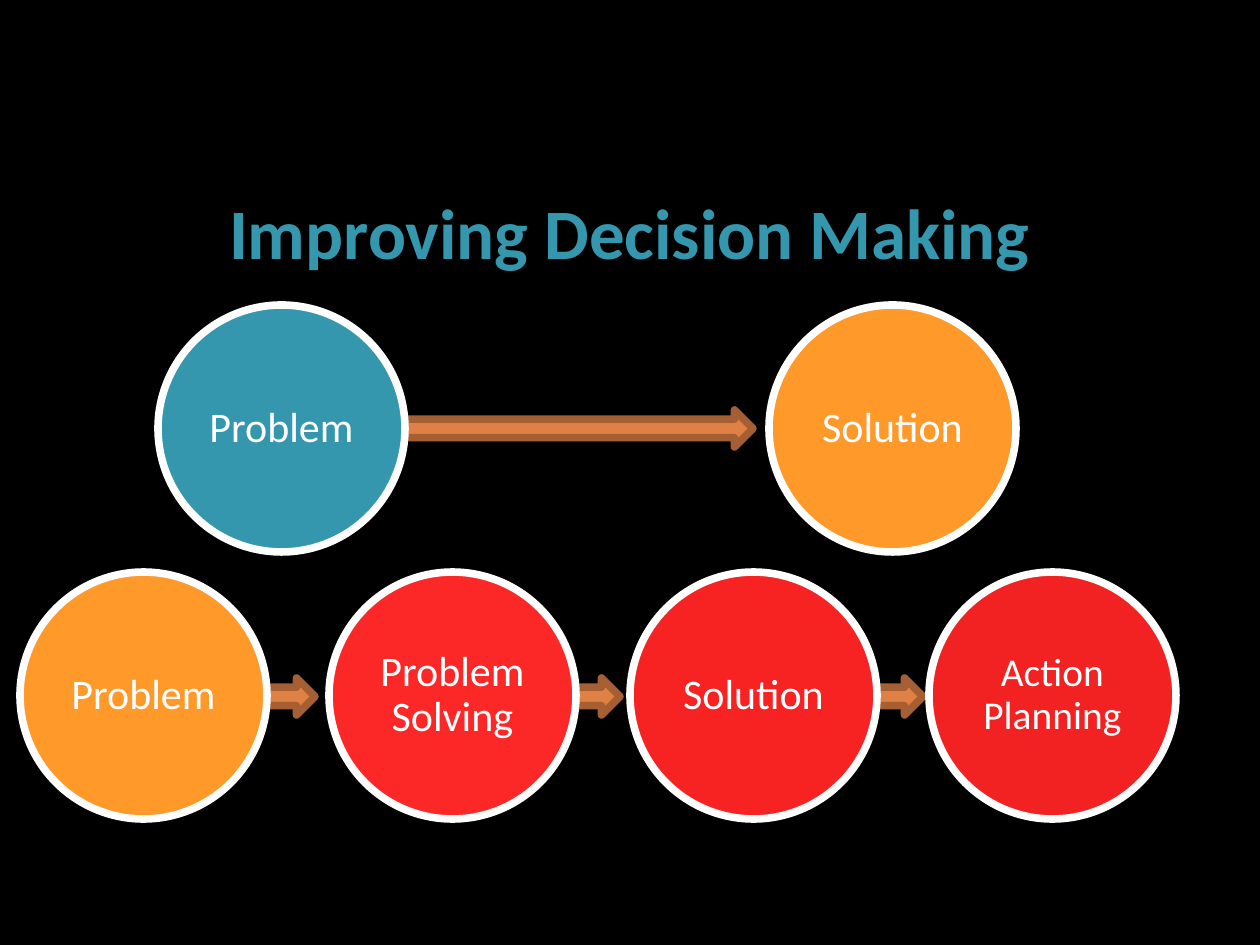
from dataclasses import dataclass

from lxml.etree import SubElement
from pptx import Presentation
from pptx.dml.color import RGBColor
from pptx.enum.shapes import MSO_SHAPE
from pptx.enum.text import MSO_ANCHOR, PP_ALIGN
from pptx.oxml.ns import qn
from pptx.shapes.autoshape import Shape
from pptx.slide import Slide
from pptx.util import Emu, Pt


@dataclass(frozen=True)
class Theme:
    font: str = "Calibri"
    back: str = "000000"
    white: str = "FFFFFF"
    teal: str = "3497AE"
    gold: str = "FF9929"
    reds: tuple[str, ...] = ("FC2828", "F72323", "F32222")
    shaft: str = "DF8045"
    edge: str = "A55F33"
    line: float = 4.33
    head: float = 40.5
    body: float = 24
    small: float = 22.5


@dataclass(frozen=True)
class Disc:
    left: int
    top: int
    text: str
    fill: str
    size: float


@dataclass(frozen=True)
class Arrow:
    left: int
    top: int
    width: int


THEME = Theme()
WIDE, HIGH = 1260, 945
DISC, THICK = 247, 37
ROW1, ROW2 = 305, 572
GAP = (DISC - THICK) // 2  # from the top of a disc to its arrow

ARROWS = [
    Arrow(378, ROW1 + GAP, 375),
    *(Arrow(left, ROW2 + GAP + 1, 67) for left in (856, 553, 248)),
]
DISCS = [
    Disc(20, ROW2, "Problem", THEME.gold, THEME.body),
    Disc(329, ROW2, "Problem Solving", THEME.reds[0], THEME.body),
    Disc(630, ROW2, "Solution", THEME.reds[1], THEME.body),
    Disc(929, ROW2, "Action Planning", THEME.reds[2], THEME.small),
    Disc(158, ROW1, "Problem", THEME.teal, THEME.body),
    Disc(769, ROW1, "Solution", THEME.gold, THEME.body),
]


def px(count: int) -> Emu:
    return Emu(round(count * 914400 / 126))


def rgb(code: str) -> RGBColor:
    return RGBColor.from_string(code)


def paint(shape: Shape, fill: str, line: str) -> None:
    shape.shadow.inherit = False
    shape.fill.solid()
    shape.fill.fore_color.rgb = rgb(fill)
    shape.line.color.rgb = rgb(line)
    shape.line.width = Pt(THEME.line)


def write(shape: Shape, text: str, size: float, color: str,
          bold: bool = False) -> None:
    frame = shape.text_frame
    frame.text = text
    frame.word_wrap = True
    frame.vertical_anchor = MSO_ANCHOR.MIDDLE
    para = frame.paragraphs[0]
    para.alignment = PP_ALIGN.CENTER
    font = para.runs[0].font
    font.name, font.size, font.bold = THEME.font, Pt(size), bold
    font.color.rgb = rgb(color)


def draw_arrow(slide: Slide, arrow: Arrow) -> None:
    shape = slide.shapes.add_shape(
        MSO_SHAPE.RIGHT_ARROW, px(arrow.left), px(arrow.top),
        px(arrow.width), px(THICK))
    paint(shape, THEME.shaft, THEME.edge)
    SubElement(shape.line._get_or_add_ln(), qn("a:round"))


def draw_disc(slide: Slide, disc: Disc) -> None:
    shape = slide.shapes.add_shape(
        MSO_SHAPE.OVAL, px(disc.left), px(disc.top), px(DISC), px(DISC))
    paint(shape, disc.fill, THEME.white)
    write(shape, disc.text, disc.size, THEME.white)
    frame = shape.text_frame
    frame.margin_left = frame.margin_right = px(13)
    frame.margin_top = frame.margin_bottom = px(4)
    frame.paragraphs[0].line_spacing = 0.9


def main() -> None:
    deck = Presentation()
    deck.slide_width, deck.slide_height = px(WIDE), px(HIGH)
    slide = deck.slides.add_slide(deck.slide_layouts[6])
    slide.background.fill.solid()
    slide.background.fill.fore_color.rgb = rgb(THEME.back)

    # Arrows lie behind the discs
    for arrow in ARROWS:
        draw_arrow(slide, arrow)

    # Title
    title = slide.shapes.add_textbox(px(0), px(168), px(WIDE), px(126))
    write(title, "Improving Decision Making", THEME.head, THEME.teal, True)

    # Steps
    for disc in DISCS:
        draw_disc(slide, disc)

    deck.save("out.pptx")


if __name__ == "__main__":
    main()
